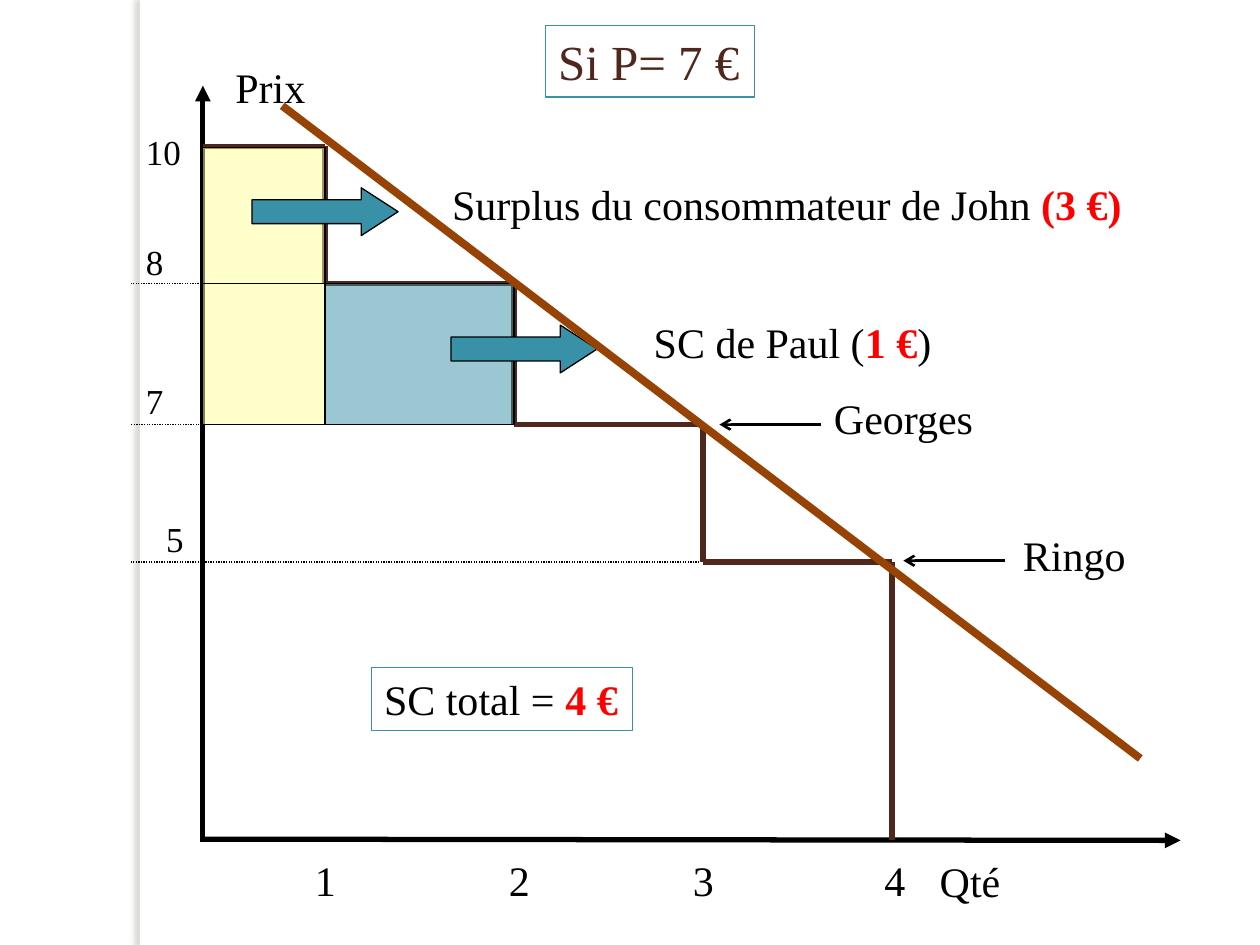
import pptx
import pptx.util
import pptx.dml.color
import pptx.enum.dml
import pptx.enum.shapes
import pptx.enum.text
import pptx.oxml
import pptx.oxml.ns

Inches, Pt = pptx.util.Inches, pptx.util.Pt
Shapes = pptx.enum.shapes.MSO_SHAPE
AutoSize = pptx.enum.text.MSO_AUTO_SIZE
rgb = pptx.dml.color.RGBColor.from_string
A = pptx.oxml.ns.nsdecls("a")
BLACK, RED, BROWN, TEAL, YELLOW = "000000", "FF0000", "4F271C", "3891A7", "FFFF99"

prs = pptx.Presentation()
prs.slide_width, prs.slide_height = Inches(10), Inches(7.5)
slide = prs.slides.add_slide(prs.slide_layouts[5])


def write(box, runs, size, auto_size=AutoSize.SHAPE_TO_FIT_TEXT):
    """Put (text, colour, bold) runs into a box that keeps to one line."""
    frame_format = {
        "word_wrap": False,
        "auto_size": auto_size,
        "vertical_anchor": pptx.enum.text.MSO_ANCHOR.TOP,
    }
    for key, value in frame_format.items():
        setattr(box.text_frame, key, value)
    paragraph = box.text_frame.paragraphs[0]
    paragraph.alignment = pptx.enum.text.PP_ALIGN.LEFT
    for text, colour, bold in runs:
        run = paragraph.add_run()
        run.text = text
        run_format = {"name": "Times New Roman", "size": Pt(size), "bold": bold}
        for key, value in run_format.items():
            setattr(run.font, key, value)
        run.font.color.rgb = rgb(colour)


def draw_line(start, end, colour, width, head=None, tail=None, dash=None):
    line = slide.shapes.add_connector(
        pptx.enum.shapes.MSO_CONNECTOR.STRAIGHT, *map(Inches, start + end))
    line.line.color.rgb = rgb(colour)
    line.line.width = Pt(width)
    if dash:
        line.line.dash_style = dash
    for tag, arrow in (("headEnd", head), ("tailEnd", tail)):
        if arrow:
            line.line._get_or_add_ln().append(
                pptx.oxml.parse_xml(f'<a:{tag} {A} type="{arrow}"/>'))
    line._element.spPr.append(pptx.oxml.parse_xml(f"<a:effectLst {A}/>"))


# Side bar with a soft shadow to the left
side_bar = slide.shapes.add_shape(
    Shapes.RECTANGLE, Inches(1.11), 0, Inches(0.08), prs.slide_height)
side_bar.fill.solid()
side_bar.fill.fore_color.rgb = rgb("FFFFFF")
side_bar.line.fill.background()
side_bar._element.spPr.append(pptx.oxml.parse_xml(
    f'<a:effectLst {A}><a:outerShdw blurRad="38100" dist="38100" dir="10800000">'
    '<a:srgbClr val="736F63"><a:alpha val="25000"/></a:srgbClr>'
    "</a:outerShdw></a:effectLst>"))

# Axes
draw_line((1.61, 6.66), (9.37, 6.67), BLACK, 3, tail="triangle")
draw_line((1.61, 6.68), (1.61, 0.68), BLACK, 3, tail="triangle")

# Stepped demand of the four buyers
steps = [(1.61, 1.16), (2.58, 1.16), (2.58, 2.25), (4.08, 2.25), (4.08, 3.37),
         (5.58, 3.37), (5.58, 4.46), (7.08, 4.46), (7.08, 6.67)]
for start, end in zip(steps, steps[1:]):
    draw_line(start, end, BROWN, 3)

# Dotted price levels
for right, level in ((2.54, 2.25), (4.04, 3.37), (5.55, 4.46)):
    draw_line((right, level), (1.04, level), BLACK, 0.75,
              dash=pptx.enum.dml.MSO_LINE.ROUND_DOT)

# Arrows from the buyers' names to their steps
for left, level in ((5.71, 3.37), (7.17, 4.45)):
    draw_line((left, level), (left + 0.81, level), BLACK, 1.5, head="arrow")

# Axis labels, graduations and buyers
labels = [
    (7.36, 6.74, 0.68, 24, [("Qté", BLACK, False)]),
    (1.77, 0.44, 0.76, 24, [("Prix", BLACK, False)]),
    (1.06, 0.99, 0.48, 20, [("10", BLACK, False)]),
    (1.06, 1.86, 0.34, 20, [("8", BLACK, False)]),
    (1.06, 2.96, 0.34, 20, [("7", BLACK, False)]),
    (1.22, 4.06, 0.34, 20, [("5", BLACK, False)]),
    (3.49, 1.37, 5.57, 24, [("Surplus du consommateur de John ", BLACK, False),
                            ("(3 €)", RED, True)]),
    (5.09, 2.46, 2.43, 24, [("SC de Paul (", BLACK, False), ("1 €", RED, True),
                            (")", BLACK, False)]),
    (6.52, 3.07, 1.31, 24, [("Georges", BLACK, False)]),
    (8.02, 4.15, 1.02, 24, [("Ringo", BLACK, False)]),
]
for quantity, left in enumerate((2.4, 3.94, 5.4, 6.92), start=1):
    labels.append((left, 6.73, 0.37, 24, [(str(quantity), BLACK, False)]))
for left, top, width, size, runs in labels:
    height = 0.5 if size == 24 else 0.44
    label = slide.shapes.add_textbox(*map(Inches, (left, top, width, height)))
    write(label, runs, size)

# Surplus areas (half transparent) and the arrows leaving them
surplus_parts = [
    (Shapes.RECTANGLE, 1.61, 1.17, 0.97, 1.08, YELLOW),
    (Shapes.RIGHT_ARROW, 2, 1.49, 1.16, 0.38, TEAL),
    (Shapes.RECTANGLE, 1.61, 2.25, 0.97, 1.12, YELLOW),
    (Shapes.RECTANGLE, 2.58, 2.25, 1.5, 1.12, TEAL),
    (Shapes.RIGHT_ARROW, 3.58, 2.58, 1.16, 0.38, TEAL),
]
for preset, left, top, width, height, colour in surplus_parts:
    part = slide.shapes.add_shape(preset, *map(Inches, (left, top, width, height)))
    part.shadow.inherit = False
    part.fill.solid()
    part.fill.fore_color.rgb = rgb(colour)
    part.line.color.rgb = rgb(BLACK)
    part.line.width = Pt(0.75)
    if preset == Shapes.RIGHT_ARROW:
        part.adjustments[1] = 0.77
    else:
        part.fill._xPr.find(".//" + pptx.oxml.ns.qn("a:srgbClr")).append(
            pptx.oxml.parse_xml(f'<a:alpha {A} val="50000"/>'))

# Framed title, of fixed height, and framed total
title = slide.shapes.title
title_place = {"left": 4.33, "top": 0.2, "width": 1.66, "height": 0.57}
for key, value in title_place.items():
    setattr(title, key, Inches(value))
write(title, [("Si P= 7 €", BROWN, False)], 28, AutoSize.NONE)

total = slide.shapes.add_shape(
    Shapes.RECTANGLE, *map(Inches, (2.95, 5.3, 2.07, 0.5)))
total.shadow.inherit = False
write(total, [("SC total = ", BLACK, False), ("4 €", RED, True)], 24)

for framed in (title, total):
    framed.fill.background()
    framed.line.color.rgb = rgb(TEAL)
    framed.line.width = Pt(0.75)

# Demand line
draw_line((2.24, 0.84), (9.05, 6.02), "964305", 4.5)

prs.save("out.pptx")
